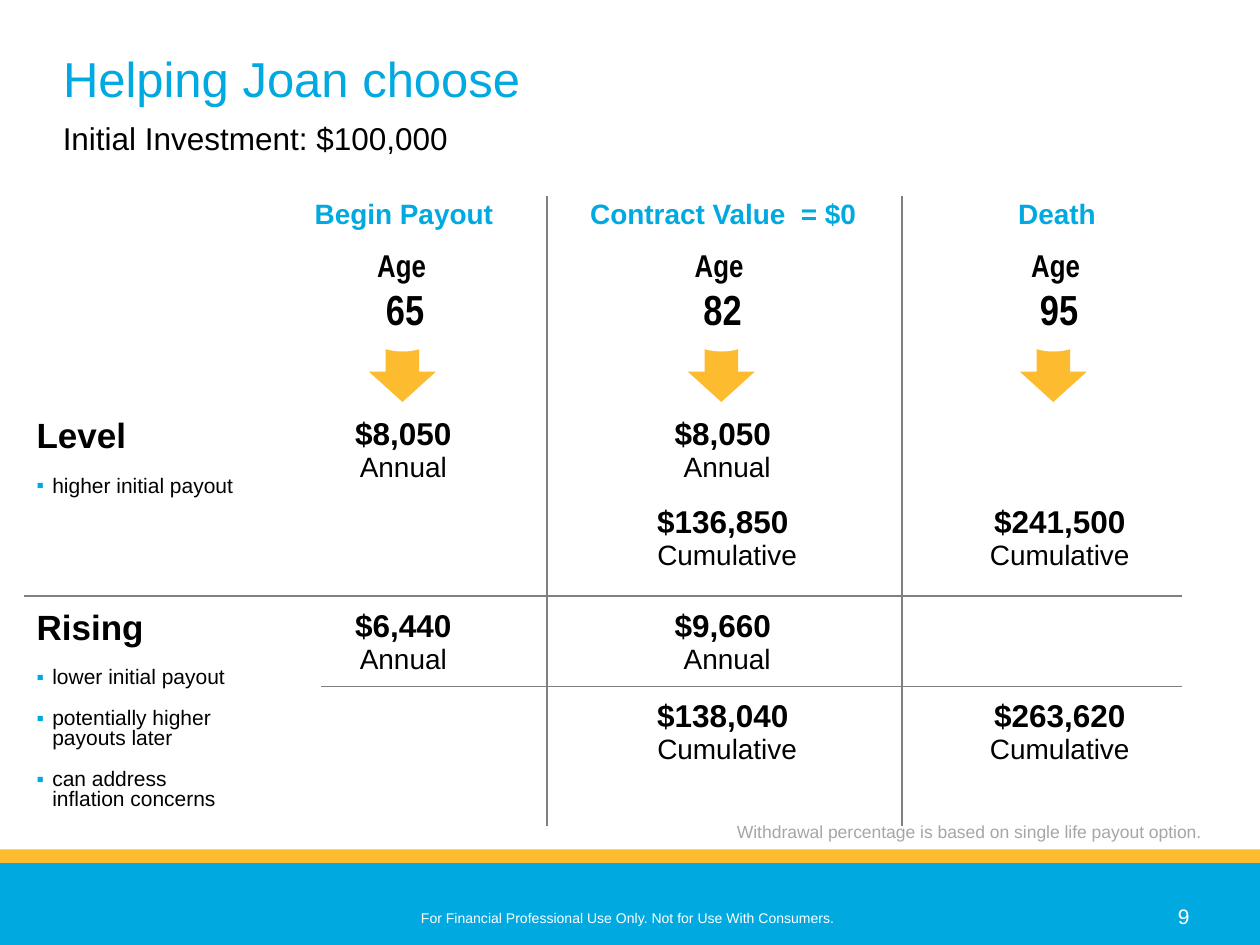
from dataclasses import dataclass
from typing import Optional

from lxml.etree import SubElement
from pptx import Presentation
from pptx.dml.color import RGBColor
from pptx.enum.shapes import MSO_CONNECTOR as Connector, MSO_SHAPE as Shape
from pptx.enum.text import MSO_ANCHOR as Anchor, PP_ALIGN as Align
from pptx.oxml import parse_xml
from pptx.oxml.ns import nsdecls, qn
from pptx.util import Pt

BLUE = RGBColor(0x00, 0xA9, 0xE0)
GOLD = RGBColor(0xFD, 0xBB, 0x30)
WHITE = RGBColor(0xFF, 0xFF, 0xFF)
BLACK = RGBColor(0x00, 0x00, 0x00)
RULE_GRAY = RGBColor(0x80, 0x80, 0x80)
NOTE_GRAY = RGBColor(0xA6, 0xA6, 0xA6)
NO_TABLE_STYLE = "{2D5ABB26-0587-4C30-8999-92F81FD0307C}"


@dataclass(frozen=True)
class Milestone:
    heading: str
    age: str
    heading_center: float
    age_center: float
    arrow_center: float


@dataclass(frozen=True)
class Amount:
    row: int
    column: int
    value: str
    period: str


@dataclass(frozen=True)
class Option:
    row: int
    name: str
    traits: tuple[str, ...]
    right_margin: float


MILESTONES = (
    Milestone("Begin Payout", "65", 230.8, 231.5, 230),
    Milestone("Contract Value  = $0", "82", 413.3, 412.9, 412.2),
    Milestone("Death", "95", 604, 605.2, 601.9),
)
AMOUNTS = (
    Amount(0, 1, "$8,050", "Annual"),
    Amount(0, 3, "$8,050 ", "Annual"),
    Amount(1, 3, "$136,850 ", "Cumulative"),
    Amount(1, 4, "$241,500", "Cumulative"),
    Amount(2, 1, "$6,440", "Annual"),
    Amount(2, 3, "$9,660 ", "Annual"),
    Amount(3, 3, "$138,040 ", "Cumulative"),
    Amount(3, 4, "$263,620", "Cumulative"),
)
OPTIONS = (
    Option(0, "Level", ("higher initial payout",), 7.2),
    Option(2, "Rising", ("lower initial payout", "potentially higher payouts later",
                         "can address inflation concerns"), 49),
)
COLUMN_WIDTHS = (170, 93.6, 18, 240.5, 139.6)
ROW_HEIGHTS = (50.4, 51.8, 49.7, 78.5)


def add_bullet(paragraph) -> None:
    properties = paragraph._p.get_or_add_pPr()
    properties.set("marL", str(Pt(9)))
    properties.set("indent", str(-Pt(9)))
    color = SubElement(properties, qn("a:buClr"))
    SubElement(color, qn("a:srgbClr"), val=str(BLUE))
    SubElement(properties, qn("a:buFont"), typeface="Arial")
    SubElement(properties, qn("a:buChar"), char="▪")


def write(frame, text: str, *, size: float, color: RGBColor = BLACK, bold: bool = False,
          font: str = "Arial", align: Align = Align.LEFT, spacing: Optional[float] = None,
          before: Optional[float] = None, bulleted: bool = False) -> None:
    paragraph = frame.add_paragraph() if frame.text else frame.paragraphs[0]
    if bulleted:
        add_bullet(paragraph)
    paragraph.alignment = align
    if spacing is not None:
        paragraph.line_spacing = spacing
    if before is not None:
        paragraph.space_before = Pt(before)
    run = paragraph.add_run()
    run.text = text
    run.font.name = font
    run.font.size = Pt(size)
    run.font.bold = bold
    run.font.color.rgb = color


def add_frame(slide, left: float, top: float, width: float, height: float, wrap: bool = True):
    frame = slide.shapes.add_textbox(Pt(left), Pt(top), Pt(width), Pt(height)).text_frame
    frame.word_wrap = wrap
    return frame


def add_block(slide, kind: Shape, left: float, top: float, width: float, height: float,
              color: RGBColor) -> None:
    shape = slide.shapes.add_shape(kind, Pt(left), Pt(top), Pt(width), Pt(height))
    shape.shadow.inherit = False
    shape.fill.solid()
    shape.fill.fore_color.rgb = color
    shape.line.fill.background()


def add_divider(slide, x: float) -> None:
    line = slide.shapes.add_connector(Connector.STRAIGHT, Pt(x), Pt(112.3), Pt(x), Pt(472.3))
    line.line.color.rgb = RULE_GRAY
    line.line.width = Pt(0.75)
    SubElement(line._element.spPr, qn("a:effectLst"))


def add_border(cell, side: str) -> None:
    cell._tc.get_or_add_tcPr().insert(0, parse_xml(
        f'<a:{side} {nsdecls("a")} w="{Pt(1)}"><a:solidFill>'
        f'<a:srgbClr val="{RULE_GRAY}"/></a:solidFill></a:{side}>'))


def add_milestone(slide, milestone: Milestone) -> None:
    add_block(slide, Shape.DOWN_ARROW, milestone.arrow_center - 19.1, 195.1, 38.2, 34.6, GOLD)
    add_block(slide, Shape.OVAL, milestone.arrow_center - 34.4, 131.9, 69, 69, WHITE)
    frame = add_frame(slide, milestone.age_center - 23.4, 136.8, 46.8, 58.3, wrap=False)
    write(frame, "Age ", size=18, bold=True, font="Arial Narrow", align=Align.CENTER)
    write(frame, milestone.age, size=24, bold=True, font="Arial Narrow", align=Align.CENTER)
    frame = add_frame(slide, milestone.heading_center - 84, 112.3, 168, 23, wrap=False)
    write(frame, milestone.heading, size=16, color=BLUE, bold=True, align=Align.CENTER, spacing=0.8)


def add_payout_table(slide) -> None:
    table = slide.shapes.add_table(len(ROW_HEIGHTS), len(COLUMN_WIDTHS), Pt(13.7), Pt(234.7),
                                   Pt(sum(COLUMN_WIDTHS)), Pt(sum(ROW_HEIGHTS))).table
    table.first_row = False
    table.horz_banding = False
    table._tbl.tblPr.find(qn("a:tableStyleId")).text = NO_TABLE_STYLE
    for column, width in zip(table.columns, COLUMN_WIDTHS):
        column.width = Pt(width)
    for row, height in zip(table.rows, ROW_HEIGHTS):
        row.height = Pt(height)
    for row in range(len(ROW_HEIGHTS)):
        for column in range(len(COLUMN_WIDTHS)):
            cell = table.cell(row, column)
            cell.fill.background()
            cell.margin_top = Pt(3.6 if row < 2 else 7.2)
            if row == 1 or (row == 0 and column == 0):
                add_border(cell, "lnB")
            if row == 2:
                add_border(cell, "lnT")
    for option in OPTIONS:
        cell = table.cell(option.row, 0)
        cell.merge(table.cell(option.row + 1, 0))
        cell.margin_right = Pt(option.right_margin)
        write(cell.text_frame, option.name, size=20, bold=True)
        for trait in option.traits:
            write(cell.text_frame, trait, size=12, spacing=0.85, before=12, bulleted=True)
    for amount in AMOUNTS:
        frame = table.cell(amount.row, amount.column).text_frame
        write(frame, amount.value, size=18, bold=True, align=Align.CENTER)
        write(frame, amount.period, size=16, align=Align.CENTER)


def add_title(slide) -> None:
    title = slide.shapes.title
    title.left, title.top, title.width, title.height = Pt(36), Pt(18), Pt(647.3), Pt(53.3)
    frame = title.text_frame
    frame.margin_left = frame.margin_right = frame.margin_top = frame.margin_bottom = 0
    frame.vertical_anchor = Anchor.MIDDLE
    write(frame, "Helping Joan choose", size=28, color=BLUE)


def add_footer(slide) -> None:
    add_block(slide, Shape.RECTANGLE, 0, 485.3, 720, 8.6, GOLD)
    add_block(slide, Shape.RECTANGLE, 0, 493.2, 720, 46.8, BLUE)
    frame = add_frame(slide, 175.7, 515.5, 368.6, 13.7)
    frame.margin_bottom = 0
    frame.vertical_anchor = Anchor.BOTTOM
    write(frame, "For Financial Professional Use Only. Not for Use With Consumers. ",
          size=8, color=WHITE, align=Align.CENTER)
    write(add_frame(slide, 666, 512.6, 27.4, 21.6, wrap=False), "9", size=12, color=WHITE)


def main() -> None:
    presentation = Presentation()
    presentation.slide_width, presentation.slide_height = Pt(720), Pt(540)
    slide = presentation.slides.add_slide(presentation.slide_layouts[5])
    add_footer(slide)
    add_title(slide)
    add_payout_table(slide)
    for milestone in MILESTONES:
        add_milestone(slide, milestone)
    write(add_frame(slide, 28.8, 67.7, 427, 25.9), "Initial Investment: $100,000",
          size=18, spacing=0.85)
    for x in (312.5, 515.5):
        add_divider(slide, x)
    write(add_frame(slide, 204.5, 465.8, 488.9, 19.4),
          "Withdrawal percentage is based on single life payout option.",
          size=10, color=NOTE_GRAY, align=Align.RIGHT)
    presentation.save("out.pptx")


if __name__ == "__main__":
    main()
